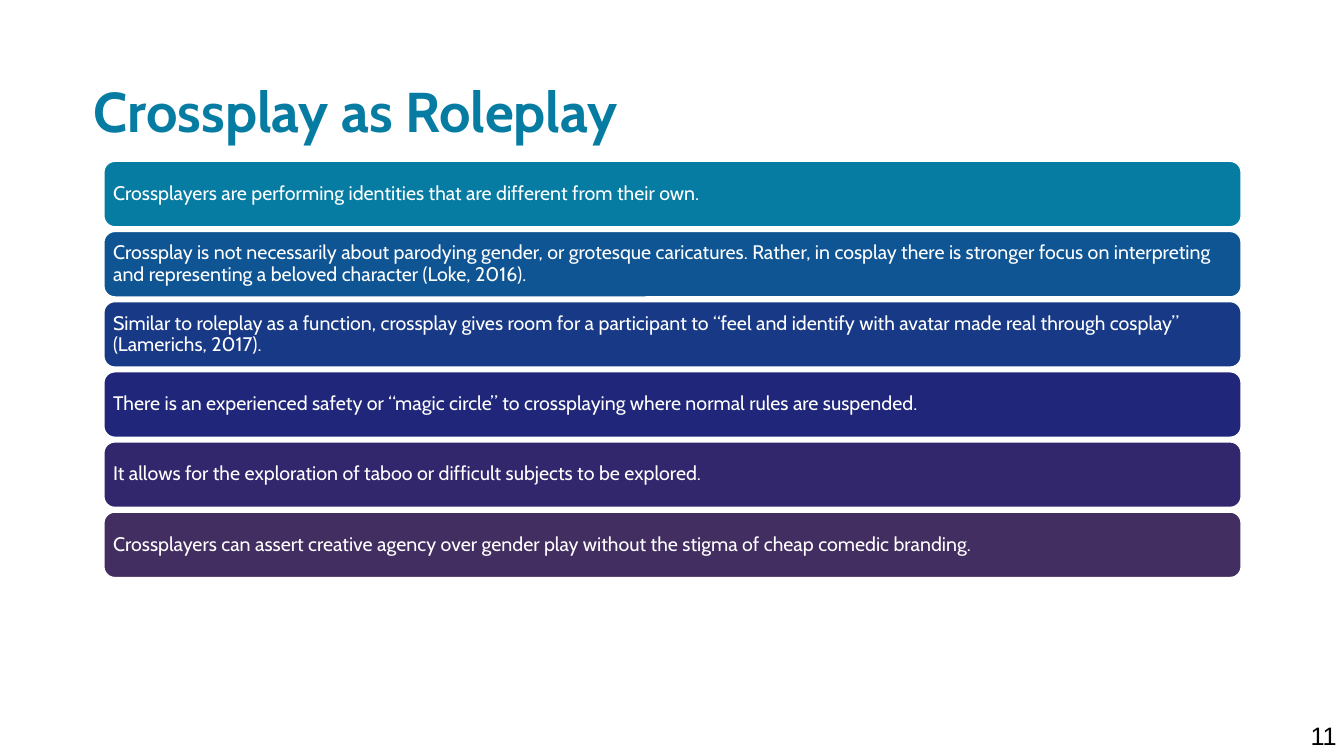
from dataclasses import dataclass

from pptx import Presentation
from pptx.dml.color import RGBColor
from pptx.enum.shapes import MSO_SHAPE as Shape
from pptx.enum.text import MSO_ANCHOR as Anchor, PP_ALIGN as Align
from pptx.util import Inches, Pt

TITLE = "Crossplay as Roleplay"
PAGE_NUMBER = "11"
POINTS = [
    ("067CA2", "Crossplayers are performing identities that are different from their own."),
    ("0F5594", "Crossplay is not necessarily about parodying gender, or grotesque caricatures. "
               "Rather, in cosplay there is stronger focus on interpreting and representing "
               "a beloved character (Loke, 2016)."),
    ("183986", "Similar to roleplay as a function, crossplay gives room for a participant to "
               "“feel and identify with avatar made real through cosplay” (Lamerichs, 2017)."),
    ("202679", "There is an experienced safety or “magic circle” to crossplaying where normal "
               "rules are suspended."),
    ("32276D", "It allows for the exploration of taboo or difficult subjects to be explored."),
    ("422E61", "Crossplayers can assert creative agency over gender play without the stigma "
               "of cheap comedic branding."),
]


@dataclass(frozen=True)
class Theme:
    heading: str = "067CA2"
    light: str = "FFFFFF"
    dark: str = "000000"
    font: str = "Cabin"
    number_font: str = "Arial"
    title_size: int = 40
    body_size: int = 14
    number_size: int = 18


THEME = Theme()
BAR_LEFT, BAR_WIDTH, BAR_HEIGHT = 1.03, 11.28, 0.65
FIRST_TOP, LAST_TOP = 1.6, 5.08
BAR_PITCH = (LAST_TOP - FIRST_TOP) / (len(POINTS) - 1)
CORNER = 0.11


def write(box, text, font, size, color, bold=False, spacing=None):
    para = box.text_frame.paragraphs[0]
    para.text = text
    para.alignment = Align.LEFT
    para.line_spacing = spacing
    para.font.name = font
    para.font.size = Pt(size)
    para.font.bold = bold
    para.font.color.rgb = RGBColor.from_string(color)


def add_title(page):
    title = page.shapes.title
    title.left, title.top = Inches(0.83), Inches(0.78)
    title.width, title.height = Inches(11.58), Inches(0.71)
    title.text_frame.vertical_anchor = Anchor.MIDDLE
    write(title, TITLE, THEME.font, THEME.title_size, THEME.heading, True, 0.9)


def add_bar(page, index, color, text):
    top = FIRST_TOP + index * BAR_PITCH
    bar = page.shapes.add_shape(Shape.ROUNDED_RECTANGLE, Inches(BAR_LEFT), Inches(top),
                                Inches(BAR_WIDTH), Inches(BAR_HEIGHT))
    bar.adjustments[0] = CORNER / BAR_HEIGHT
    bar.shadow.inherit = False
    bar.fill.solid()
    bar.fill.fore_color.rgb = RGBColor.from_string(color)
    bar.line.color.rgb = RGBColor.from_string(THEME.light)
    bar.line.width = Pt(1)
    frame = bar.text_frame
    frame.word_wrap = True
    frame.vertical_anchor = Anchor.MIDDLE
    frame.margin_left = frame.margin_right = Inches(0.06)
    frame.margin_top = frame.margin_bottom = Inches(0.06)
    write(bar, text, THEME.font, THEME.body_size, THEME.light, spacing=0.9)


def add_page_number(page):
    box = page.shapes.add_textbox(Inches(12.9), Inches(7.1), Inches(0.43), Inches(0.4))
    box.text_frame.word_wrap = False
    box.text_frame.margin_right = 0
    write(box, PAGE_NUMBER, THEME.number_font, THEME.number_size, THEME.dark)


def main():
    deck = Presentation()
    deck.slide_width, deck.slide_height = Inches(13.33), Inches(7.5)
    page = deck.slides.add_slide(deck.slide_layouts[5])
    add_title(page)
    for index, (color, text) in enumerate(POINTS):
        add_bar(page, index, color, text)
    add_page_number(page)
    deck.save("out.pptx")


if __name__ == "__main__":
    main()
